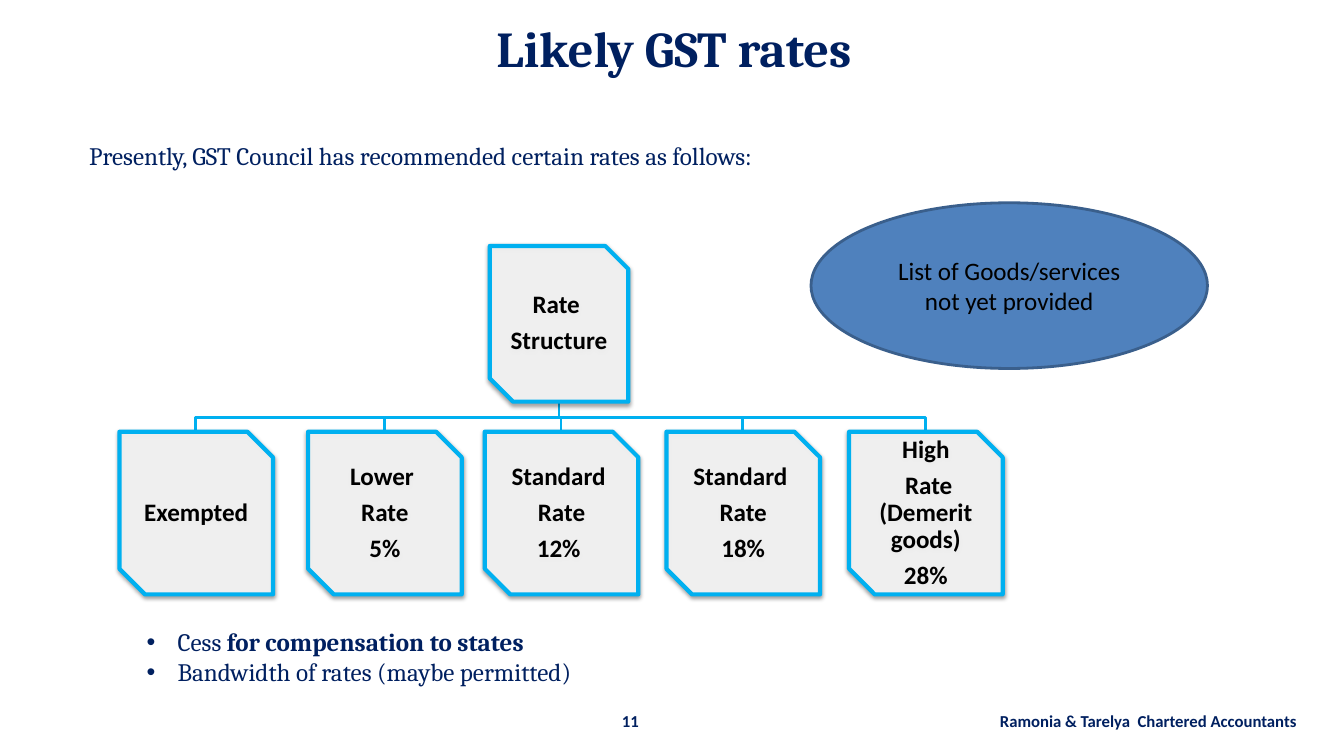
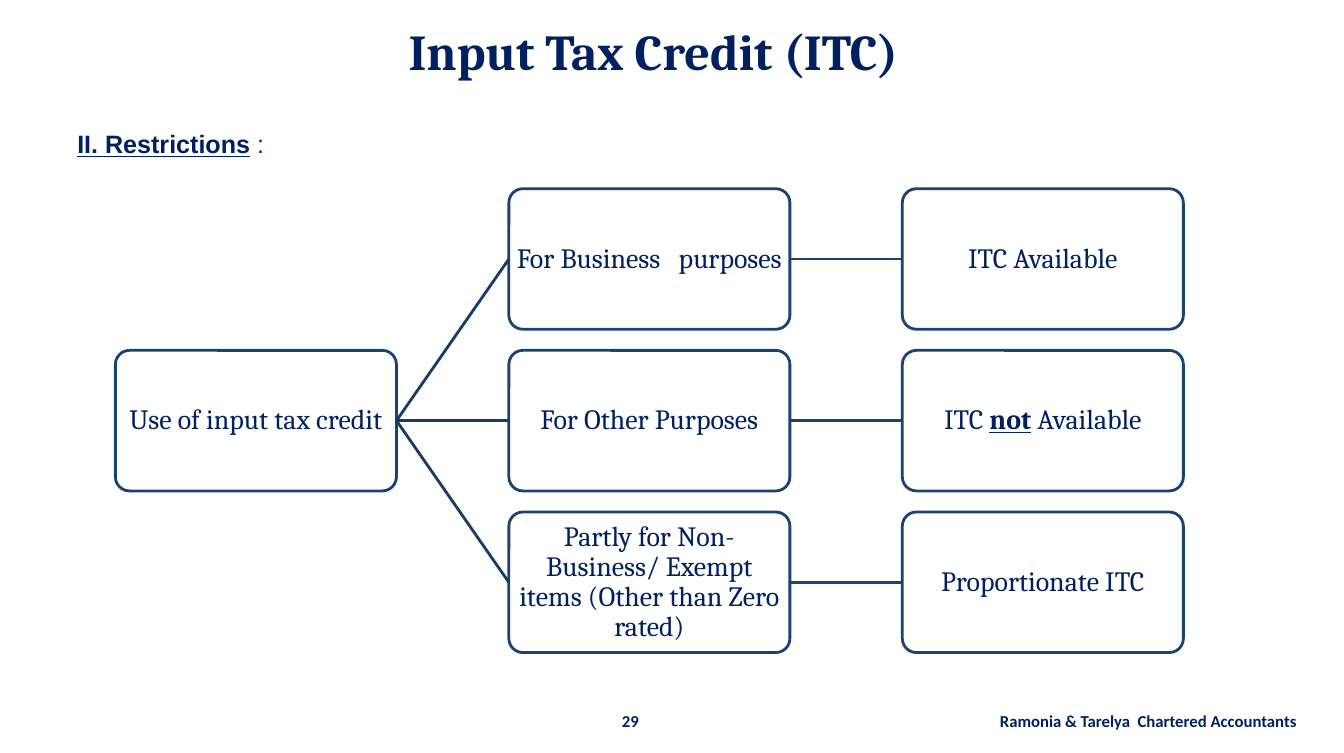
from pptx import Presentation
from pptx.dml.color import RGBColor
from pptx.enum.shapes import MSO_CONNECTOR as Conn, MSO_SHAPE as Kind
from pptx.enum.text import MSO_ANCHOR as Anchor, MSO_AUTO_SIZE as Fit, PP_ALIGN as Align
from pptx.oxml import parse_xml
from pptx.oxml.ns import nsdecls
from pptx.util import Pt

PX = 9144
NAVY = RGBColor(0x00, 0x20, 0x60)
SKY = RGBColor(0x00, 0xB0, 0xF0)
BLUE = RGBColor(0x4F, 0x81, 0xBD)
EDGE = RGBColor(0x3A, 0x5F, 0x8C)
STEEL = RGBColor(0x1C, 0x42, 0x71)
DARK = RGBColor(0x19, 0x3A, 0x64)
WHITE = RGBColor(0xFF, 0xFF, 0xFF)
BLACK = RGBColor(0x00, 0x00, 0x00)
FIRM = "Ramonia & Tarelya  Chartered Accountants"
NS = nsdecls("a")
SHADOW = (f'<a:effectLst {NS}><a:outerShdw blurRad="39400" dist="20300" dir="5400000" rotWithShape="0">'
          '<a:srgbClr val="000000"><a:alpha val="38000"/></a:srgbClr></a:outerShdw></a:effectLst>')


def write(shape, text, font, size, color, bold=False, align=Align.LEFT, anchor=Anchor.TOP, inset=None):
    frame = shape.text_frame
    frame.text = text
    frame.word_wrap = True
    frame.auto_size = Fit.NONE
    frame.vertical_anchor = anchor
    if inset is not None:
        frame.margin_left = frame.margin_right = frame.margin_top = frame.margin_bottom = inset * PX
    for par in frame.paragraphs:
        par.alignment = align
        if inset is not None:
            par.line_spacing = 0.9
            par.space_after = Pt(6.3)
        first, *rest = par.text.split("|")
        par.text = first
        for part in rest:
            par.add_run().text = part
        for run in par.runs:
            run.font.name = font
            run.font.size = Pt(size)
            run.font.bold = bold
            run.font.color.rgb = color
    return frame.paragraphs


def link(slide, kind, color, *ends):
    line = slide.shapes.add_connector(kind, *[int(n * PX) for n in ends])
    line.line.color.rgb = color
    line.line.width = Pt(2)
    line._element.spPr.append(parse_xml(f"<a:effectLst {NS}/>"))
    return line


deck = Presentation()
deck.slide_width, deck.slide_height = 1339 * PX, 750 * PX

slides = []
for name, page, spot in [
    ("Likely GST rates", "11", (44, 11, 1255, 73)),
    ("Input Tax Credit (ITC)", "29", (42, 15, 1218, 71)),
]:
    slide = deck.slides.add_slide(deck.slide_layouts[1])
    title = slide.shapes.title
    title.left, title.top, title.width, title.height = [n * PX for n in spot]
    write(title, name, "Cambria", 36, NAVY, True, Align.CENTER, Anchor.MIDDLE)
    for text, left, width, align in [(page, 588, 80, Align.CENTER), (FIRM, 902, 400, Align.RIGHT)]:
        foot = slide.shapes.add_textbox(left * PX, 703 * PX, width * PX, 30 * PX)
        write(foot, text, "Calibri", 12, NAVY, True, align)
    slides.append(slide)
rates, credit = slides

intro = rates.shapes.add_textbox(79 * PX, 135 * PX, 1011 * PX, 40 * PX)
write(intro, "Presently, GST Council has recommended certain rates as follows:", "Cambria", 18, NAVY)

root, top, low = 557, 401, 430
drops = [195, 383, 559, 740, 922]
for mid in drops:
    x, y = (root + mid) / 2, (top + low) / 2
    rise, run = (low - top) / 2, (mid - root) / 2
    line = link(rates, Conn.ELBOW, SKY, x - rise, y + run, x + rise, y - run)
    line._element.spPr.xfrm.set("rot", "5400000")

cards = [("Rate \nStructure", 488, 245, 138, 155)]
names = ["Exempted", "Lower \nRate\n5%", "Standard \nRate\n12% ", "Standard \nRate\n18%",
         "High\n Rate (Demerit goods)\n28%"]
cards += [(text, mid - 76, low, 153, 162) for text, mid in zip(names, drops)]
for text, *spot in cards:
    card = rates.shapes.add_shape(Kind.SNIP_2_DIAG_RECTANGLE, *[n * PX for n in spot])
    card.fill.solid()
    card.fill.fore_color.rgb = WHITE
    tint = card._element.spPr.find(".//{*}solidFill/{*}srgbClr")
    tint.append(parse_xml(f'<a:alpha {NS} val="80000"/>'))
    card.line.color.rgb = SKY
    card.line.width = Pt(3)
    card._element.spPr.append(parse_xml(SHADOW))
    write(card, text, "Calibri", 18, BLACK, True, Align.CENTER, Anchor.MIDDLE, 1)

oval = rates.shapes.add_shape(Kind.OVAL, 808 * PX, 202 * PX, 395 * PX, 165 * PX)
oval.shadow.inherit = False
oval.fill.solid()
oval.fill.fore_color.rgb = BLUE
oval.line.color.rgb = EDGE
oval.line.width = Pt(2)
write(oval, "List of Goods/services not yet provided", "Calibri", 18, BLACK,
      align=Align.CENTER, anchor=Anchor.MIDDLE)

notes = rates.placeholders[1]
notes.left, notes.top, notes.width, notes.height = 136 * PX, 619 * PX, 634 * PX, 71 * PX
pars = write(notes, "Cess |for compensation to states\nBandwidth of rates (maybe permitted)",
             "Cambria", 18, NAVY)
pars[0].runs[1].font.bold = True
for par in pars:
    par.space_before = Pt(0)
    prop = par._p.get_or_add_pPr()
    prop.set("marL", str(31 * PX))
    prop.set("indent", str(-31 * PX))

head = credit.placeholders[1]
head.left, head.top, head.width, head.height = 67 * PX, 108 * PX, 1205 * PX, 608 * PX
par = write(head, "II. Restrictions| :", "Arial", 18, NAVY)[0]
par.line_spacing = 1.5
par.runs[0].font.bold = par.runs[0].font.underline = True
prop = par._p.get_or_add_pPr()
prop.set("marL", "0")
prop.set("indent", "0")
prop.append(parse_xml(f"<a:buNone {NS}/>"))

nodes = {}
for text, col, row in [
    ("Use of input tax credit", 0, 1),
    ("For Business   purposes", 1, 0),
    ("ITC Available", 2, 0),
    ("For Other Purposes", 1, 1),
    ("ITC |not| Available", 2, 1),
    ("Partly for Non-Business/ Exempt items (Other than Zero rated)", 1, 2),
    ("Proportionate ITC", 2, 2),
]:
    left, top = 115 + 392 * col, 188 + 161 * row
    node = credit.shapes.add_shape(Kind.ROUNDED_RECTANGLE, left * PX, top * PX, 280 * PX, 140 * PX)
    node.adjustments[0] = 0.1
    node.shadow.inherit = False
    node.fill.solid()
    node.fill.fore_color.rgb = WHITE
    node.line.color.rgb = STEEL
    node.line.width = Pt(2)
    par = write(node, text, "Cambria", 20, NAVY, False, Align.CENTER, Anchor.MIDDLE, 1)[0]
    for run in par.runs[1:2]:
        run.font.bold = run.font.underline = True
    nodes[col, row] = node

for row in range(3):
    for start, end, color in [((0, 1), (1, row), DARK), ((1, row), (2, row), STEEL)]:
        line = link(credit, Conn.STRAIGHT, color, 0, 0, 0, 0)
        line.begin_connect(nodes[start], 3)
        line.end_connect(nodes[end], 1)

deck.save("out.pptx")
